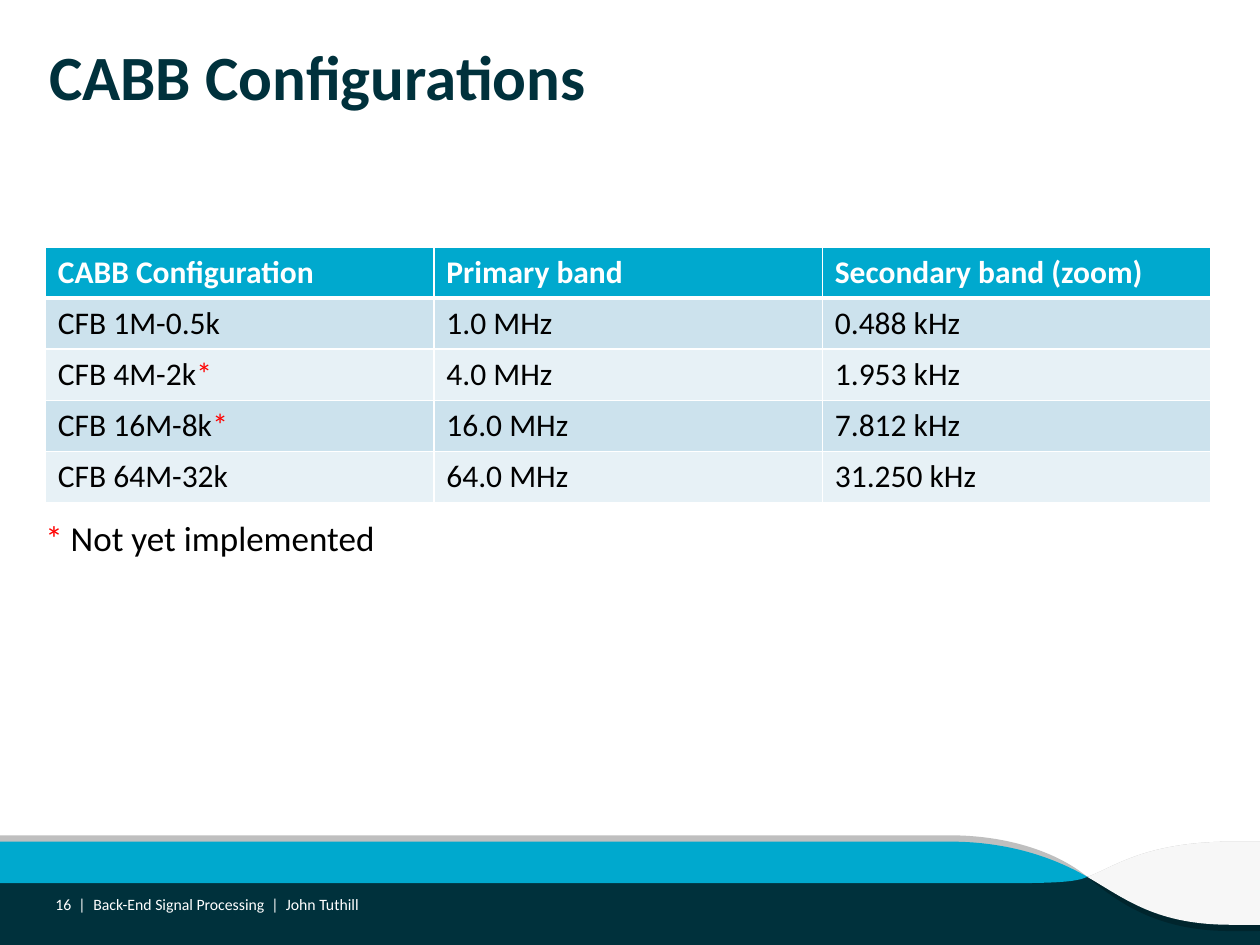
from typing import NamedTuple

from lxml import etree
from pptx import Presentation
from pptx.dml.color import RGBColor
from pptx.enum.shapes import MSO_SHAPE
from pptx.enum.text import MSO_ANCHOR, PP_ALIGN
from pptx.oxml.ns import qn
from pptx.util import Inches, Pt

FONT = "Calibri"
NAVY = RGBColor(0x00, 0x31, 0x3C)
DEEP_NAVY = RGBColor(0x00, 0x25, 0x2D)
CYAN = RGBColor(0x00, 0xA9, 0xCE)
GREY = RGBColor(0xBF, 0xBF, 0xBF)
PALE_GREY = RGBColor(0xF7, 0xF7, 0xF7)
BAND_DARK = RGBColor(0xCC, 0xE2, 0xED)
BAND_LIGHT = RGBColor(0xE7, 0xF1, 0xF6)
WHITE = RGBColor(0xFF, 0xFF, 0xFF)
BLACK = RGBColor(0x00, 0x00, 0x00)
RED = RGBColor(0xFF, 0x00, 0x00)

TOP, MIDDLE = MSO_ANCHOR.TOP, MSO_ANCHOR.MIDDLE
LEFT, RIGHT = PP_ALIGN.LEFT, PP_ALIGN.RIGHT
MARK = "*"


class Ribbon(NamedTuple):
    """Each contour lists points (x, y) and Bezier curves (x1, y1, x2, y2, x, y)."""
    color: RGBColor
    contours: list


class Label(NamedTuple):
    text: str
    left: float
    width: float
    align: PP_ALIGN


RIBBONS = [
    Ribbon(GREY, [
        [(10, 6.68), (9.78, 6.68), (9.08, 6.68, 8.83, 6.89, 8.63, 6.96),
         (10, 6.96), (10, 7.39)],
        [(7.54, 6.63), (0, 6.63), (0, 6.96), (8.63, 6.96),
         (8.4, 6.77, 8.01, 6.63, 7.54, 6.63)],
    ]),
    Ribbon(DEEP_NAVY, [
        [(8.63, 6.96), (0, 6.96), (0, 7.01), (7.95, 7.01),
         (8.4, 7.01, 8.54, 7, 8.63, 6.96)],
        [(10, 6.96), (8.63, 6.96), (8.87, 7.16, 9.18, 7.39, 9.77, 7.39), (10, 7.39)],
    ]),
    Ribbon(CYAN, [
        [(8.63, 6.96), (8.37, 6.81, 8.01, 6.68, 7.54, 6.68), (0, 6.68), (0, 7.01),
         (7.95, 7.01), (8.4, 7.01, 8.54, 7, 8.63, 6.96)],
    ]),
    Ribbon(PALE_GREY, [
        [(9.78, 6.68), (9.08, 6.68, 8.83, 6.89, 8.63, 6.96),
         (8.94, 7.14, 9.18, 7.34, 9.77, 7.34), (10, 7.34), (10, 6.68)],
    ]),
]

CONFIGURATIONS = [
    ("CABB Configuration", "Primary band", "Secondary band (zoom)"),
    ("CFB 1M-0.5k", "1.0 MHz", "0.488 kHz"),
    ("CFB 4M-2k*", "4.0 MHz", "1.953 kHz"),
    ("CFB 16M-8k*", "16.0 MHz", "7.812 kHz"),
    ("CFB 64M-32k", "64.0 MHz", "31.250 kHz"),
]

FOOTER = [
    Label("Back-End Signal Processing  |  John Tuthill", 0.74, 6.65, LEFT),
    Label("16  |", 0.36, 0.32, RIGHT),
]


def paint(shape, color: RGBColor) -> None:
    shape.shadow.inherit = False
    shape.fill.solid()
    shape.fill.fore_color.rgb = color
    shape.line.fill.background()


def to_points(step: tuple) -> list:
    """Split a step into its points, in EMU."""
    return [(Inches(x), Inches(y)) for x, y in zip(step[::2], step[1::2])]


def draw_ribbon(shapes, ribbon: Ribbon) -> None:
    """Draw straight segments through all points, then bend those of each curve."""
    builder = None
    steps = []
    for start, *rest in ribbon.contours:
        origin = to_points(start)[0]
        if builder is None:
            builder = shapes.build_freeform(*origin)
        else:
            builder.move_to(*origin)
        builder.add_line_segments([point for step in rest for point in to_points(step)])
        # The closing segment is a separate element, so steps match line segments.
        steps.extend(rest)
    shape = builder.convert_to_shape()
    segments = iter(list(shape._element.iter(qn("a:lnTo"))))
    for step in steps:
        group = [next(segments) for _ in to_points(step)]
        if len(group) == 3:
            curve = etree.Element(qn("a:cubicBezTo"))
            group[0].addprevious(curve)
            for segment in group:
                curve.append(segment[0])
                segment.getparent().remove(segment)
    paint(shape, ribbon.color)


def style(font, size: float, color: RGBColor, bold: bool = False) -> None:
    font.name = FONT
    font.size = Pt(size)
    font.bold = bold
    font.color.rgb = color


def write_marked(paragraph, text: str, size: float) -> None:
    """Write text in black with its asterisk in red."""
    before, mark, after = text.partition(MARK)
    style(paragraph.font, size, BLACK)
    for part, color in ((before, BLACK), (mark, RED), (after, BLACK)):
        if part:
            run = paragraph.add_run()
            run.text = part
            style(run.font, size, color)


def clear_insets(frame, anchor: MSO_ANCHOR) -> None:
    frame.word_wrap = True
    frame.vertical_anchor = anchor
    frame.margin_left = frame.margin_right = 0
    frame.margin_top = frame.margin_bottom = 0


def add_text_frame(shapes, left: float, top: float, width: float, height: float,
                   anchor: MSO_ANCHOR):
    box = shapes.add_textbox(Inches(left), Inches(top), Inches(width), Inches(height))
    clear_insets(box.text_frame, anchor)
    return box.text_frame


def set_borders(cell, top: float, bottom: float) -> None:
    properties = cell._tc.get_or_add_tcPr()
    for side, width in (("L", 1), ("R", 1), ("T", top), ("B", bottom)):
        line = etree.SubElement(properties, qn(f"a:ln{side}"), w=str(Pt(width)))
        fill = etree.SubElement(line, qn("a:solidFill"))
        etree.SubElement(fill, qn("a:srgbClr"), val=str(WHITE))


def draw_table(shapes) -> None:
    table = shapes.add_table(len(CONFIGURATIONS), len(CONFIGURATIONS[0]), Inches(0.36),
                             Inches(1.96), Inches(9.25), Inches(2.03)).table
    for r, row in enumerate(CONFIGURATIONS):
        for c, text in enumerate(row):
            cell = table.cell(r, c)
            set_borders(cell, top=3 if r == 1 else 1, bottom=3 if r == 0 else 1)
            cell.fill.solid()
            paragraph = cell.text_frame.paragraphs[0]
            if r == 0:
                cell.fill.fore_color.rgb = CYAN
                paragraph.text = text
                style(paragraph.font, 18, WHITE, bold=True)
            else:
                cell.fill.fore_color.rgb = BAND_DARK if r % 2 else BAND_LIGHT
                write_marked(paragraph, text, 18)


def main() -> None:
    deck = Presentation()
    deck.slide_width, deck.slide_height = Inches(10), Inches(7.5)
    slide = deck.slides.add_slide(deck.slide_layouts[5])
    shapes = slide.shapes

    title = shapes.title
    title.left, title.top = Inches(0.39), Inches(0.3)
    title.width, title.height = Inches(9.25), Inches(0.93)
    clear_insets(title.text_frame, TOP)
    heading = title.text_frame.paragraphs[0]
    heading.text = "CABB Configurations"
    heading.alignment = LEFT
    style(heading.font, 36, NAVY, bold=True)

    footer_band = shapes.add_shape(MSO_SHAPE.RECTANGLE, 0, Inches(6.96),
                                   Inches(10), Inches(0.54))
    paint(footer_band, NAVY)
    for ribbon in RIBBONS:
        draw_ribbon(shapes, ribbon)

    draw_table(shapes)

    for label in FOOTER:
        frame = add_text_frame(shapes, label.left, 7.11, label.width, 0.14, MIDDLE)
        paragraph = frame.paragraphs[0]
        paragraph.text = label.text
        paragraph.alignment = label.align
        style(paragraph.font, 9, WHITE)

    footnote = add_text_frame(shapes, 0.36, 4.14, 2.68, 0.32, TOP).paragraphs[0]
    footnote.line_spacing = 0.9
    write_marked(footnote, "* Not yet implemented", 20)

    deck.save("out.pptx")


if __name__ == "__main__":
    main()
